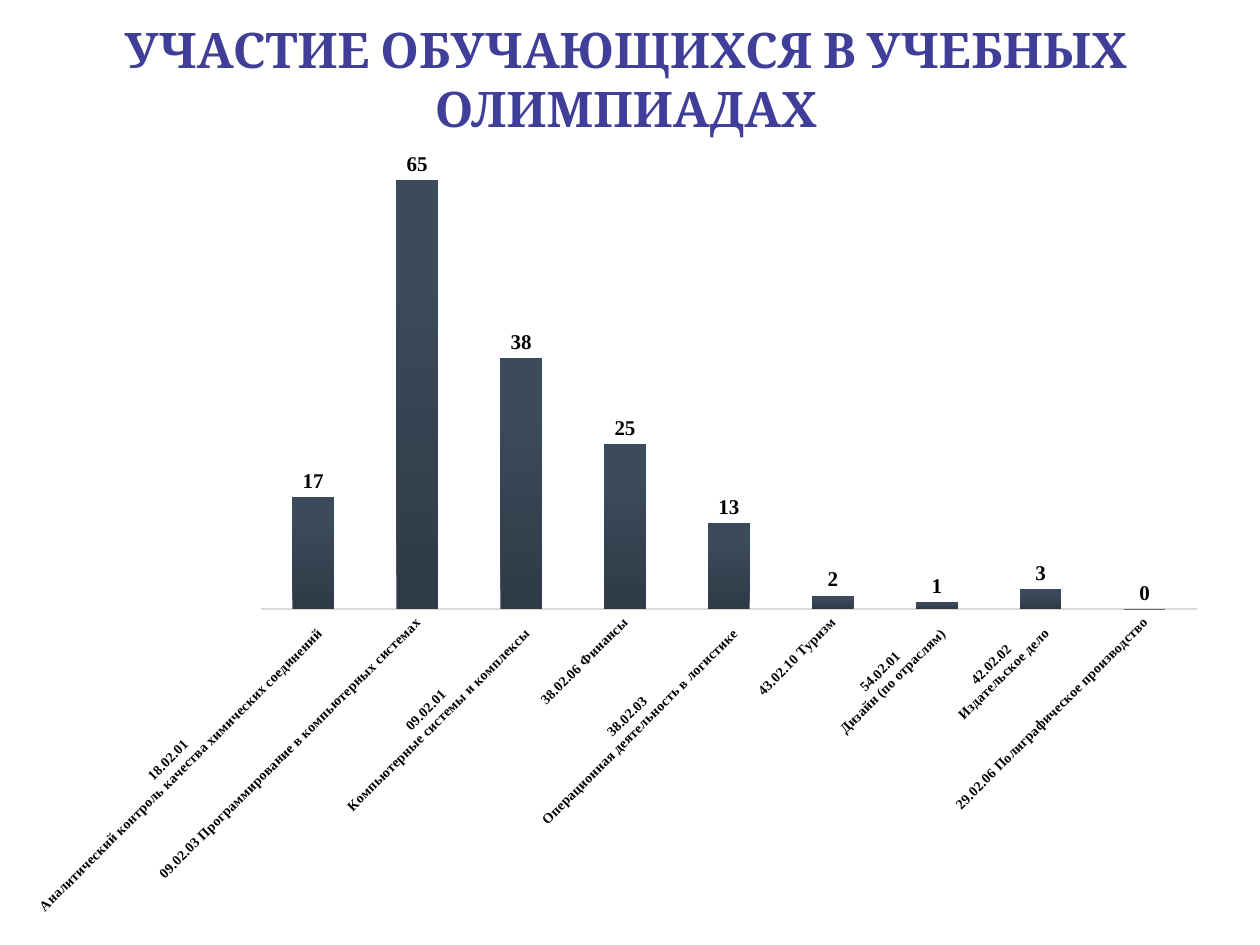
from pptx import Presentation
from pptx import util as u
from pptx.chart.data import CategoryChartData
from pptx.dml.color import RGBColor
from pptx.enum import chart as ch
from pptx.enum import text
from pptx.oxml.ns import qn

SCALE = 914400 / 126
COLORS = {"title": "3F3F9A", "text": "000000", "axis": "D9D9D9",
          "dark": "2E3A47", "light": "3C4B5C"}
DATA = [
    ("18.02.01 \nАналитический контроль качества химических соединений", 17),
    ("09.02.03 Программирование в компьютерных системах", 65),
    ("09.02.01 \nКомпьютерные системы и комплексы", 38),
    ("38.02.06 Финансы", 25),
    ("38.02.03 \nОперационная деятельность в логистике", 13),
    ("43.02.10 Туризм", 2),
    ("54.02.01 \nДизайн (по отраслям)", 1),
    ("42.02.02 \nИздательское дело", 3),
    ("29.02.06 Полиграфическое производство", 0),
]


def px(n):
    return u.Emu(round(n * SCALE))


def rgb(name):
    return RGBColor.from_string(COLORS[name])


class Deck:
    def __init__(self, wide, high):
        self.prs = Presentation()
        self.prs.slide_width, self.prs.slide_height = px(wide), px(high)
        self.face = "Times New Roman"

    def add(self):
        self.slide = self.prs.slides.add_slide(self.prs.slide_layouts[5])

    def font(self, font, size, color="text", bold=True, face=None):
        font.name = face or self.face
        font.size = u.Pt(size)
        font.bold = bold
        font.color.rgb = rgb(color)

    def title(self, words, box):
        shape = self.slide.shapes.title
        shape.left, shape.top, shape.width, shape.height = map(px, box)
        frame = shape.text_frame
        frame.text = words
        frame.word_wrap = True
        frame.auto_size = text.MSO_AUTO_SIZE.NONE
        frame.vertical_anchor = text.MSO_ANCHOR.MIDDLE
        par = frame.paragraphs[0]
        par.alignment = text.PP_ALIGN.CENTER
        self.font(par.font, 28, "title", face="Cambria")

    def bars(self, rows, box):
        data = CategoryChartData()
        data.categories = [name for name, _ in rows]
        data.add_series("Series 1", [val for _, val in rows])
        chart = self.slide.shapes.add_chart(
            ch.XL_CHART_TYPE.COLUMN_CLUSTERED, *map(px, box), data).chart
        chart.has_title = chart.has_legend = False
        self.font(chart.font, 10, bold=False)

        val = chart.value_axis
        val.visible = val.has_major_gridlines = False
        val.minimum_scale, val.maximum_scale = 0, 70

        cat = chart.category_axis
        cat.major_tick_mark = ch.XL_TICK_MARK.NONE
        cat.format.line.color.rgb = rgb("axis")
        cat.format.line.width = u.Pt(1)
        self.font(cat.tick_labels.font, 8)
        body = cat._element.find(qn("c:txPr")).find(qn("a:bodyPr"))
        body.set("rot", "-2700000")
        body.set("vert", "horz")

        plot = chart.plots[0]
        plot.vary_by_categories = False
        plot.gap_width, plot.overlap = 150, -25
        fill = plot.series[0].format.fill
        fill.gradient()
        fill.gradient_angle = 90
        for stop, pos, name in zip(fill.gradient_stops, (0, 0.8), ("dark", "light")):
            stop.position = pos
            stop.color.rgb = rgb(name)

        plot.has_data_labels = True
        labels = plot.data_labels
        labels.show_value = True
        labels.position = ch.XL_LABEL_POSITION.OUTSIDE_END
        self.font(labels.font, 12)


def main():
    deck = Deck(1260, 945)
    deck.add()
    deck.title("УЧАСТИЕ ОБУЧАЮЩИХСЯ В УЧЕБНЫХ ОЛИМПИАДАХ", (59, 0, 1134, 157))
    deck.bars(DATA, (0, 131, 1221, 799))
    deck.prs.save("out.pptx")


if __name__ == "__main__":
    main()
